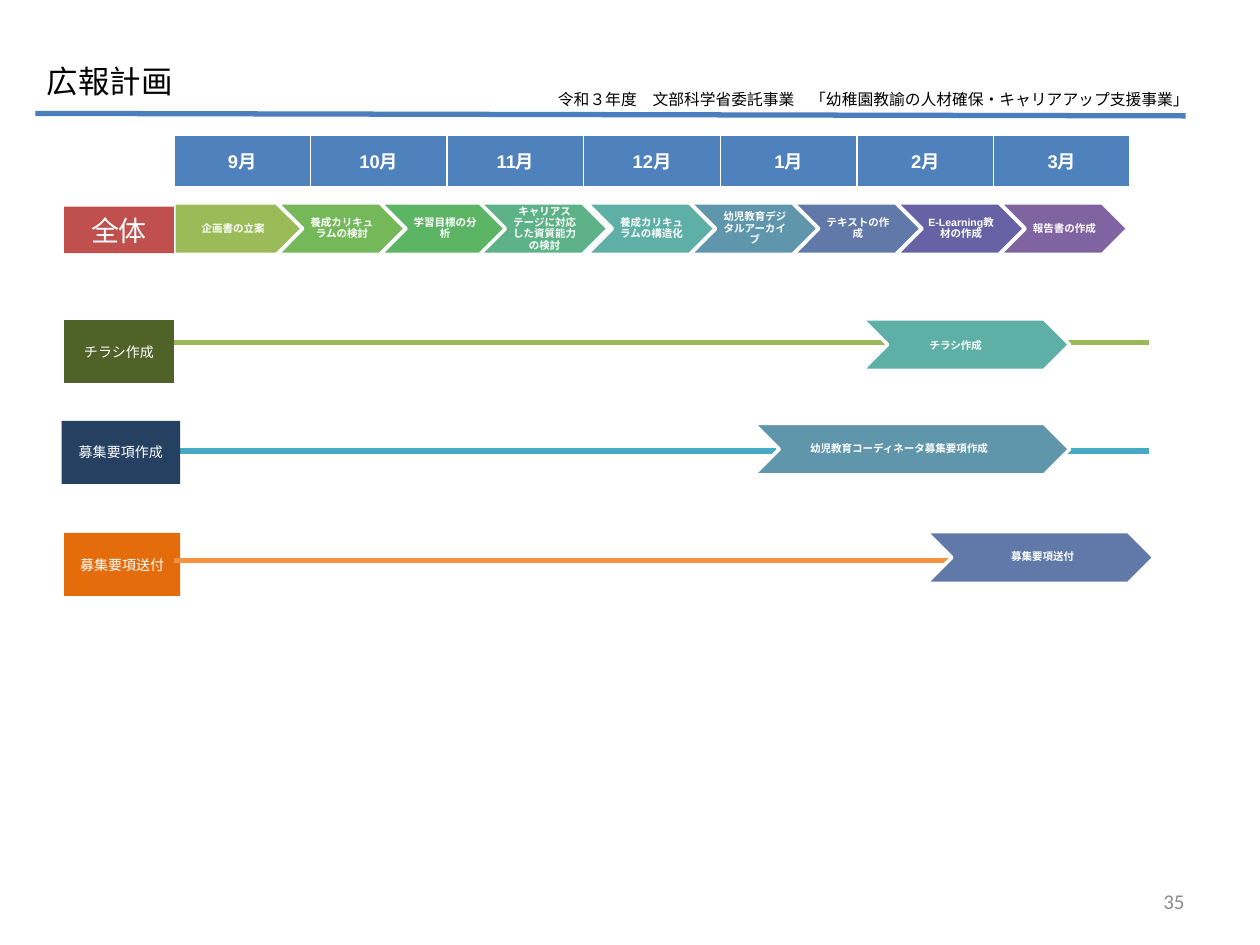
from dataclasses import dataclass

from lxml.etree import SubElement
from pptx import Presentation
from pptx.dml.color import RGBColor
from pptx.enum.shapes import MSO_CONNECTOR, MSO_SHAPE
from pptx.enum.text import MSO_ANCHOR, PP_ALIGN
from pptx.oxml.ns import qn
from pptx.util import Inches, Pt


@dataclass(frozen=True)
class Theme:
    white: str = "FFFFFF"
    black: str = "000000"
    page_grey: str = "8C8C8C"
    header_rule: str = "4B7EBC"
    month_fill: str = "4F81BD"
    overall_fill: str = "C0504D"
    japanese_font: str = "Noto Sans CJK JP"
    step_font: str = "Arial"
    label_font: str = "Calibri"
    title_size: float = 18
    overall_size: float = 16
    page_size: float = 12
    month_size: float = 10.5
    subtitle_size: float = 9
    label_size: float = 8
    step_size: float = 6
    line_width: float = 3
    step_outline: float = 2


@dataclass(frozen=True)
class Box:
    left: float
    top: float
    width: float
    height: float

    def lengths(self) -> tuple:
        return tuple(Inches(v) for v in (self.left, self.top, self.width, self.height))


@dataclass(frozen=True)
class Step:
    text: str
    fill: str
    shift: float = 0


@dataclass(frozen=True)
class Track:
    label: str
    label_box: Box
    label_fill: str
    line_y: float
    line_color: str
    arrow_box: Box
    arrow_fill: str
    arrow_text: str
    text_box: Box
    line_in_front: bool = False


THEME = Theme()
CHART_LEFT, CHART_RIGHT = 1.38, 9.12
STEP_TOP, STEP_WIDTH, STEP_HEIGHT, STEP_PITCH = 1.61, 1.02, 0.41, 0.819
MONTHS = ["9月", "10月", "11月", "12月", "1月", "2月", "3月"]
STEPS = [
    Step("企画書の立案", "9BBB59"),
    Step("養成カリキュラムの検討", "75B85A"),
    Step("学習目標の分析", "5CB565"),
    Step("キャリアステージに対応した資質能力の検討", "5DB287", shift=-0.03),
    Step("養成カリキュラムの構造化", "5EAFA6"),
    Step("幼児教育デジタルアーカイブ", "6096AC"),
    Step("テキストの作成", "6179A8"),
    Step("E-Learning教材の作成", "6762A5"),
    Step("報告書の作成", "8064A2"),
]
TRACKS = [
    Track("チラシ作成", Box(0.51, 2.54, 0.87, 0.5), "4F6228", 2.72, "98B955",
          Box(6.84, 2.53, 1.65, 0.41), "5EAFA6", "チラシ作成", Box(7.08, 2.54, 0.99, 0.41)),
    Track("募集要項作成", Box(0.49, 3.34, 0.94, 0.5), "254061", 3.58, "46AAC5",
          Box(5.98, 3.36, 2.51, 0.41), "6096AC", "幼児教育コーディネータ募集要項作成",
          Box(6.26, 3.36, 1.73, 0.41)),
    Track("募集要項送付", Box(0.51, 4.23, 0.92, 0.5), "E46C0A", 4.45, "F69240",
          Box(7.35, 4.22, 1.81, 0.41), "6179A8", "募集要項送付",
          Box(7.72, 4.22, 1.09, 0.41), line_in_front=True),
]


def write_text(frame, text: str, *, size: float, font: str, color: str = THEME.white,
               bold: bool = False, align=PP_ALIGN.CENTER, anchor=MSO_ANCHOR.MIDDLE,
               line_spacing: float = 1.0, space_after: float = 0):
    """Fill a text frame or table cell with one formatted paragraph."""
    frame.vertical_anchor = anchor
    text_frame = getattr(frame, "text_frame", frame)
    text_frame.word_wrap = True
    paragraph = text_frame.paragraphs[0]
    paragraph.alignment = align
    paragraph.line_spacing = line_spacing
    paragraph.space_after = Pt(space_after)
    run = paragraph.add_run()
    run.text = text
    run.font.size, run.font.name, run.font.bold = Pt(size), font, bold
    run.font.color.rgb = RGBColor.from_string(color)
    SubElement(run.font._element, qn("a:ea")).set("typeface", THEME.japanese_font)


def add_text(shapes, box: Box, text: str, **text_format):
    shape = shapes.add_textbox(*box.lengths())
    write_text(shape.text_frame, text, **text_format)
    return shape


def add_filled(shapes, kind, box: Box, fill: str, outline: bool = False):
    shape = shapes.add_shape(kind, *box.lengths())
    shape.shadow.inherit = False
    shape.fill.solid()
    shape.fill.fore_color.rgb = RGBColor.from_string(fill)
    if outline:
        shape.line.color.rgb = RGBColor.from_string(THEME.white)
        shape.line.width = Pt(THEME.step_outline)
    else:
        shape.line.fill.background()
    return shape


def add_line(shapes, start: tuple, end: tuple, color: str):
    points = [Inches(v) for v in (*start, *end)]
    line = shapes.add_connector(MSO_CONNECTOR.STRAIGHT, *points)
    line.line.color.rgb = RGBColor.from_string(color)
    line.line.width = Pt(THEME.line_width)
    SubElement(line._element.spPr, qn("a:effectLst"))


def add_arrow(shapes, kind, box: Box, fill: str, text: str, text_box: Box):
    """Group an arrow with the caption that sits on it."""
    group = shapes.add_group_shape()
    add_filled(group.shapes, kind, box, fill, outline=True)
    caption = add_text(group.shapes, text_box, text, size=THEME.step_size,
                       font=THEME.step_font, bold=True, line_spacing=0.9, space_after=2)
    frame = caption.text_frame
    frame.margin_left, frame.margin_right = Inches(0.03), Inches(0.01)
    frame.margin_top = frame.margin_bottom = Inches(0.02)


def add_label(shapes, box: Box, fill: str, text: str, size: float):
    label = add_filled(shapes, MSO_SHAPE.RECTANGLE, box, fill)
    write_text(label.text_frame, text, size=size, font=THEME.label_font)


def add_header(slide):
    title = slide.shapes.title
    title.left, title.top, title.width, title.height = Box(0.27, 0.44, 3.46, 0.4).lengths()
    heading = dict(font=THEME.japanese_font, color=THEME.black,
                   align=PP_ALIGN.LEFT, anchor=MSO_ANCHOR.TOP)
    write_text(title.text_frame, "広報計画", size=THEME.title_size, **heading)
    add_line(slide.shapes, (0.28, 0.9), (9.41, 0.92), THEME.header_rule)
    add_text(slide.shapes, Box(4.33, 0.66, 5.35, 0.25),
             "令和３年度　文部科学省委託事業　「幼稚園教諭の人材確保・キャリアアップ支援事業」",
             size=THEME.subtitle_size, **heading)


def add_months(shapes):
    box = Box(CHART_LEFT, 1.07, 7.59, 0.41)
    table = shapes.add_table(1, len(MONTHS), *box.lengths()).table
    for column, month in enumerate(MONTHS):
        table.columns[column].width = Inches(box.width / len(MONTHS))
        cell = table.cell(0, column)
        cell.fill.solid()
        cell.fill.fore_color.rgb = RGBColor.from_string(THEME.month_fill)
        write_text(cell, month, size=THEME.month_size, font=THEME.step_font, bold=True)


def add_steps(shapes):
    for index, step in enumerate(STEPS):
        left = CHART_LEFT + index * STEP_PITCH + step.shift
        box = Box(left, STEP_TOP, STEP_WIDTH, STEP_HEIGHT)
        if index == 0:
            kind, text_box = MSO_SHAPE.PENTAGON, Box(left, STEP_TOP, 0.92, STEP_HEIGHT)
        else:
            kind, text_box = MSO_SHAPE.CHEVRON, Box(left + 0.2, STEP_TOP, 0.61, STEP_HEIGHT)
        add_arrow(shapes, kind, box, step.fill, step.text, text_box)


def add_track(shapes, track: Track):
    def draw_line():
        add_line(shapes, (CHART_LEFT, track.line_y), (CHART_RIGHT, track.line_y),
                 track.line_color)

    if not track.line_in_front:
        draw_line()
    add_label(shapes, track.label_box, track.label_fill, track.label, THEME.label_size)
    if track.line_in_front:
        draw_line()
    add_arrow(shapes, MSO_SHAPE.CHEVRON, track.arrow_box, track.arrow_fill,
              track.arrow_text, track.text_box)


def main():
    presentation = Presentation()
    presentation.slide_width, presentation.slide_height = Inches(10), Inches(7.5)
    slide = presentation.slides.add_slide(presentation.slide_layouts[5])
    add_header(slide)
    # Overall schedule
    add_steps(slide.shapes)
    add_months(slide.shapes)
    add_label(slide.shapes, Box(0.51, 1.64, 0.87, 0.37), THEME.overall_fill, "全体",
              THEME.overall_size)
    # Individual tasks
    for track in TRACKS:
        add_track(slide.shapes, track)
    # Page number
    add_text(slide.shapes, Box(7.17, 6.95, 2.33, 0.4), "35", size=THEME.page_size,
             font=THEME.label_font, color=THEME.page_grey, align=PP_ALIGN.RIGHT)
    presentation.save("out.pptx")


if __name__ == "__main__":
    main()
